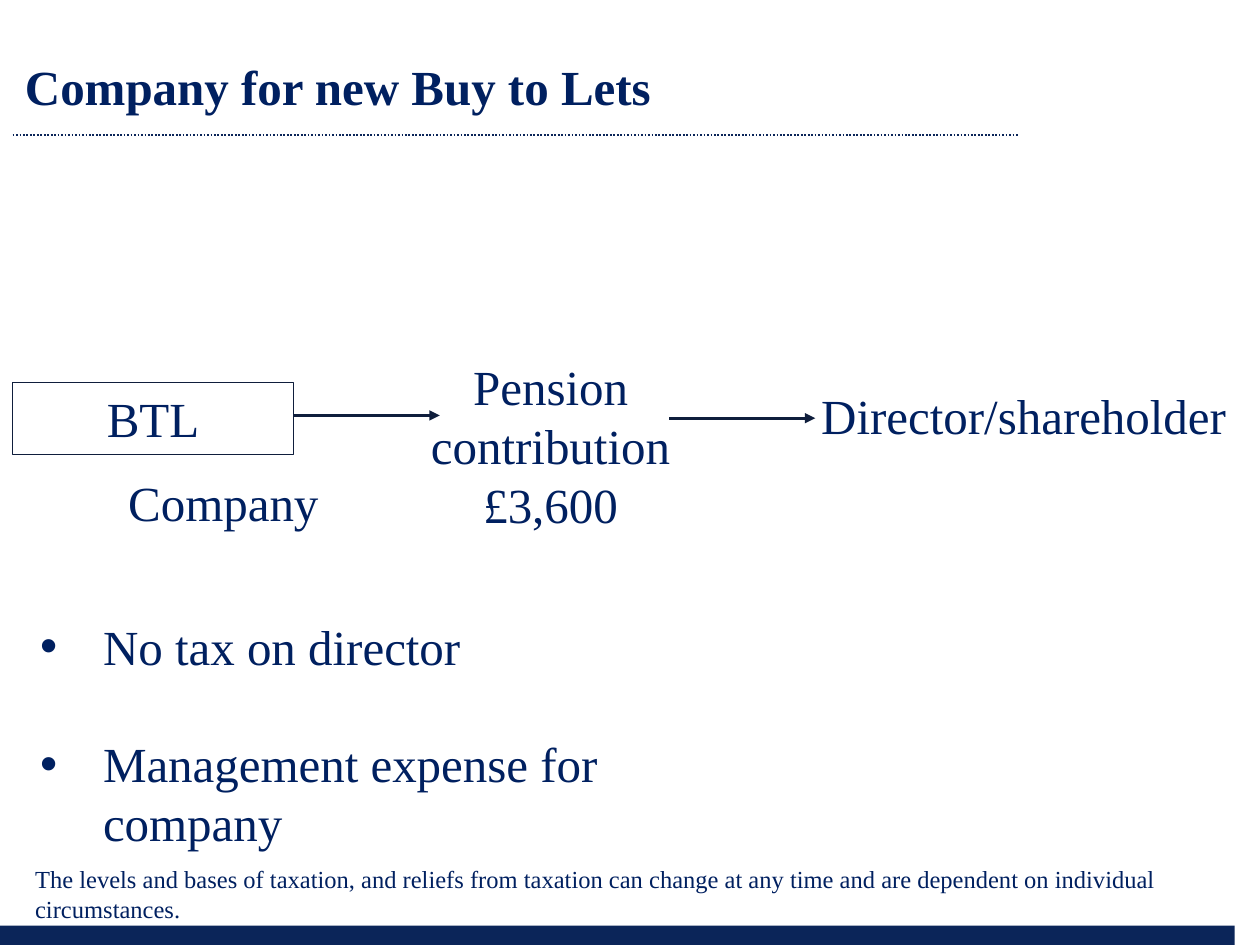
from lxml import etree
from pptx import Presentation
from pptx.dml.color import RGBColor
from pptx.enum.dml import MSO_LINE
from pptx.enum.shapes import MSO_CONNECTOR, MSO_SHAPE
from pptx.enum.text import MSO_ANCHOR, PP_ALIGN
from pptx.oxml.ns import qn
from pptx.util import Pt

LEFT, CENTER = PP_ALIGN.LEFT, PP_ALIGN.CENTER
TOP, MIDDLE = MSO_ANCHOR.TOP, MSO_ANCHOR.MIDDLE
STRAIGHT, RECT = MSO_CONNECTOR.STRAIGHT, MSO_SHAPE.RECTANGLE
DOTTED = MSO_LINE.ROUND_DOT
TEXT, BAND, LINE = "002060", "0B2559", "0F1E3C"


def rgb(value):
    return RGBColor.from_string(value)


def write(sp, lines, size=28, bold=False, align=LEFT, anchor=TOP, bullet_gap=None):
    """Fill a shape with paragraphs; bullet_gap adds bullets that far apart."""
    tf = sp.text_frame
    tf.word_wrap = True
    tf.vertical_anchor = anchor
    for i, line in enumerate(lines):
        p = tf.paragraphs[0] if i == 0 else tf.add_paragraph()
        p.alignment = align
        if bullet_gap is not None:
            pPr = p._p.get_or_add_pPr()
            pPr.set("marL", str(Pt(36)))
            pPr.set("indent", str(-Pt(36)))
            etree.SubElement(pPr, qn("a:buFont")).set("typeface", "Arial")
            etree.SubElement(pPr, qn("a:buChar")).set("char", "•")
            if i:
                p.space_before = Pt(bullet_gap)
        r = p.add_run()
        r.text = line
        r.font.name = "Times New Roman"
        r.font.size = Pt(size)
        r.font.bold = bold
        r.font.color.rgb = rgb(TEXT)


prs = Presentation()
prs.slide_width, prs.slide_height = Pt(720), Pt(540)
s = prs.slides.add_slide(prs.slide_layouts[6])

# Footer band and company box
band = s.shapes.add_shape(RECT, Pt(0), Pt(529), Pt(705.6), Pt(11))
band.shadow.inherit = False
band.fill.solid()
band.fill.fore_color.rgb = rgb(BAND)
band.line.fill.background()

box = s.shapes.add_shape(RECT, Pt(7.2), Pt(218.4), Pt(160.6), Pt(41.2))
box.shadow.inherit = False
box.fill.background()
box.line.color.rgb = rgb(LINE)
box.line.width = Pt(0.75)
write(box, ["BTL"], align=CENTER, anchor=MIDDLE)

# Title rule and flow arrows: x1, x2, y, colour, width, is arrow
for x1, x2, y, color, width, arrow in [
    (7.2, 582.6, 77, BAND, 1, False),
    (167.8, 251.3, 237.4, LINE, 1.5, True),
    (382.4, 465.9, 239, LINE, 1.5, True),
]:
    c = s.shapes.add_connector(STRAIGHT, Pt(x1), Pt(y), Pt(x2), Pt(y))
    c.line.color.rgb = rgb(color)
    c.line.width = Pt(width)
    if arrow:
        etree.SubElement(c.line._get_or_add_ln(), qn("a:tailEnd")).set("type", "triangle")
    else:
        c.line.dash_style = DOTTED
    etree.SubElement(c._element.spPr, qn("a:effectLst"))

# Text boxes: left, top, width, height, lines, formatting
for x, y, w, h, lines, style in [
    (7.2, 28.8, 379.4, 41, ["Company for new Buy to Lets"], {"bold": True}),
    (205.2, 200.2, 218.9, 108.7, ["Pension contribution", "£3,600"], {"align": CENTER}),
    (462.2, 216.7, 251.3, 41, ["Director/shareholder"], {}),
    (66.2, 266.4, 251.3, 41, ["Company"], {}),
    (15.8, 348.5, 419, 143.3, ["No tax on director", "Management expense for company"],
     {"bullet_gap": 33.6}),
    (13, 490.3, 674.6, 41, ["The levels and bases of taxation, and reliefs from taxation can change "
                            "at any time and are dependent on individual circumstances."], {"size": 14}),
]:
    sp = s.shapes.add_textbox(Pt(x), Pt(y), Pt(w), Pt(h))
    write(sp, lines, **style)

prs.save("out.pptx")
